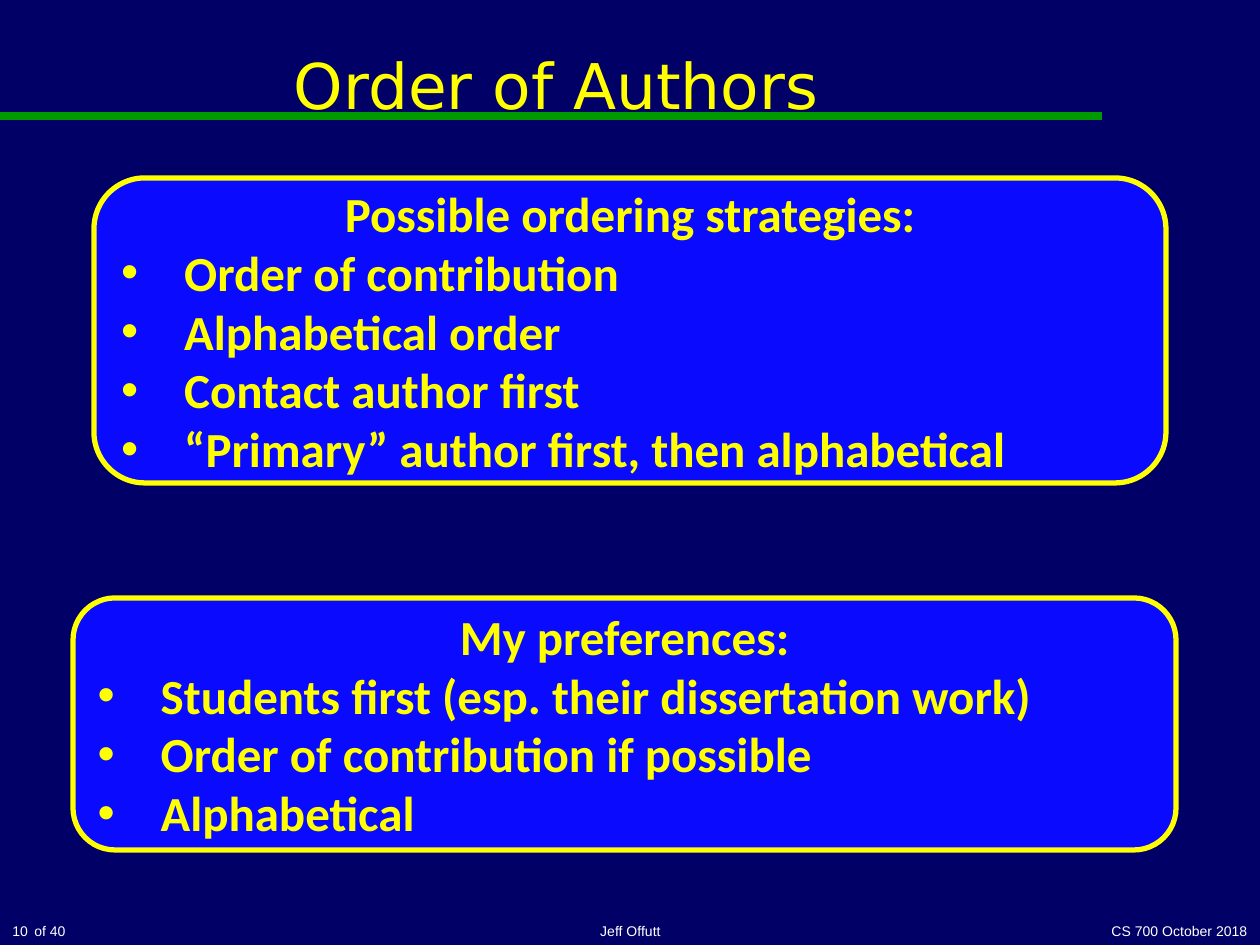
import pptx
import pptx.util
import pptx.dml.color
import pptx.enum.shapes
import pptx.enum.text
import pptx.oxml.ns
import lxml.etree

PIXELS_PER_INCH = 126
COLORS = {
    "background": "000066",
    "rule": "009900",
    "panel": "0A0AFF",
    "accent": "FFFF00",
    "footer": "FFFFFF",
}
ALIGN = pptx.enum.text.PP_ALIGN
ANCHOR = pptx.enum.text.MSO_ANCHOR


def emu(pixels):
    return round(pixels * pptx.util.Inches(1) / PIXELS_PER_INCH)


def color(name):
    return pptx.dml.color.RGBColor.from_string(COLORS[name])


def add_drawing_element(parent, tag, **attributes):
    name = pptx.oxml.ns.qn("a:" + tag)
    return lxml.etree.SubElement(parent, name, attributes)


def style_font(para, name, size, color_name, bold=False):
    for span in para.runs:
        span.font.name = name
        span.font.size = pptx.util.Pt(size)
        span.font.bold = bold
        span.font.color.rgb = color(color_name)


def add_label(page, box, text, font, size, color_name, align, anchor, wrap=True):
    label = page.shapes.add_textbox(*map(emu, box))
    frame = label.text_frame
    frame.word_wrap = wrap
    frame.vertical_anchor = anchor
    frame.text = text
    para = frame.paragraphs[0]
    para.alignment = align
    style_font(para, font, size, color_name)


def add_header(page, box):
    """Place the title over the green rule, which starts at the page edge."""
    left, top, width, height = box
    rule_y = emu(top + 116)
    rule = page.shapes.add_connector(
        pptx.enum.shapes.MSO_CONNECTOR.STRAIGHT, 0, rule_y, emu(left + width), rule_y)
    rule.line.color.rgb = color("rule")
    rule.line.width = pptx.util.Pt(4.5)
    add_drawing_element(rule._element.spPr, "effectLst")
    add_label(page, box, "Order of Authors", "DejaVu Sans", 36, "accent",
              ALIGN.CENTER, ANCHOR.MIDDLE)


def make_bullet(para):
    indent = emu(63)
    properties = para._p.get_or_add_pPr()
    properties.set("marL", str(indent))
    properties.set("indent", str(-indent))
    add_drawing_element(properties, "buFont", typeface="Arial")
    add_drawing_element(properties, "buChar", char="•")


def add_panel(page, box, heading, items):
    panel = page.shapes.add_shape(
        pptx.enum.shapes.MSO_SHAPE.ROUNDED_RECTANGLE, *map(emu, box))
    panel.shadow.inherit = False
    panel.fill.solid()
    panel.fill.fore_color.rgb = color("panel")
    panel.line.color.rgb = color("accent")
    panel.line.width = pptx.util.Pt(3)
    frame = panel.text_frame
    frame.word_wrap = True
    frame.vertical_anchor = ANCHOR.MIDDLE
    frame.text = "\n".join([heading, *items])
    for index, para in enumerate(frame.paragraphs):
        para.alignment = ALIGN.LEFT if index else ALIGN.CENTER
        if index:
            make_bullet(para)
        style_font(para, "Calibri", 28, "accent", bold=True)


def add_footer(page, box):
    left, top, width, height = box
    parts = [
        ("10", 0, 0, 220, ALIGN.LEFT, True),
        ("of 40", 21, 12, 57, ALIGN.RIGHT, False),
        ("Jeff Offutt", 431, 0, 399, ALIGN.CENTER, True),
        ("CS 700 October 2018", width - 262, 0, 262, ALIGN.RIGHT, True),
    ]
    for text, x, y, part_width, align, wrap in parts:
        part_box = (left + x, top + y, part_width, height - y)
        add_label(page, part_box, text, "Arial", 8, "footer",
                  align, ANCHOR.BOTTOM, wrap)


def main():
    deck = pptx.Presentation()
    deck.slide_width = emu(1260)
    deck.slide_height = emu(945)
    page = deck.slides.add_slide(deck.slide_layouts[6])
    page.background.fill.solid()
    page.background.fill.fore_color.rgb = color("background")

    add_header(page, (10, 0, 1092, 168))
    add_panel(page, (94, 178, 1072, 305), "Possible ordering strategies:", [
        "Order of contribution",
        "Alphabetical order",
        "Contact author first",
        "“Primary” author first, then alphabetical",
    ])
    add_panel(page, (73, 598, 1103, 252), "My preferences:", [
        "Students first (esp. their dissertation work)",
        "Order of contribution if possible",
        "Alphabetical",
    ])
    add_footer(page, (0, 903, 1260, 42))
    deck.save("out.pptx")


if __name__ == "__main__":
    main()
